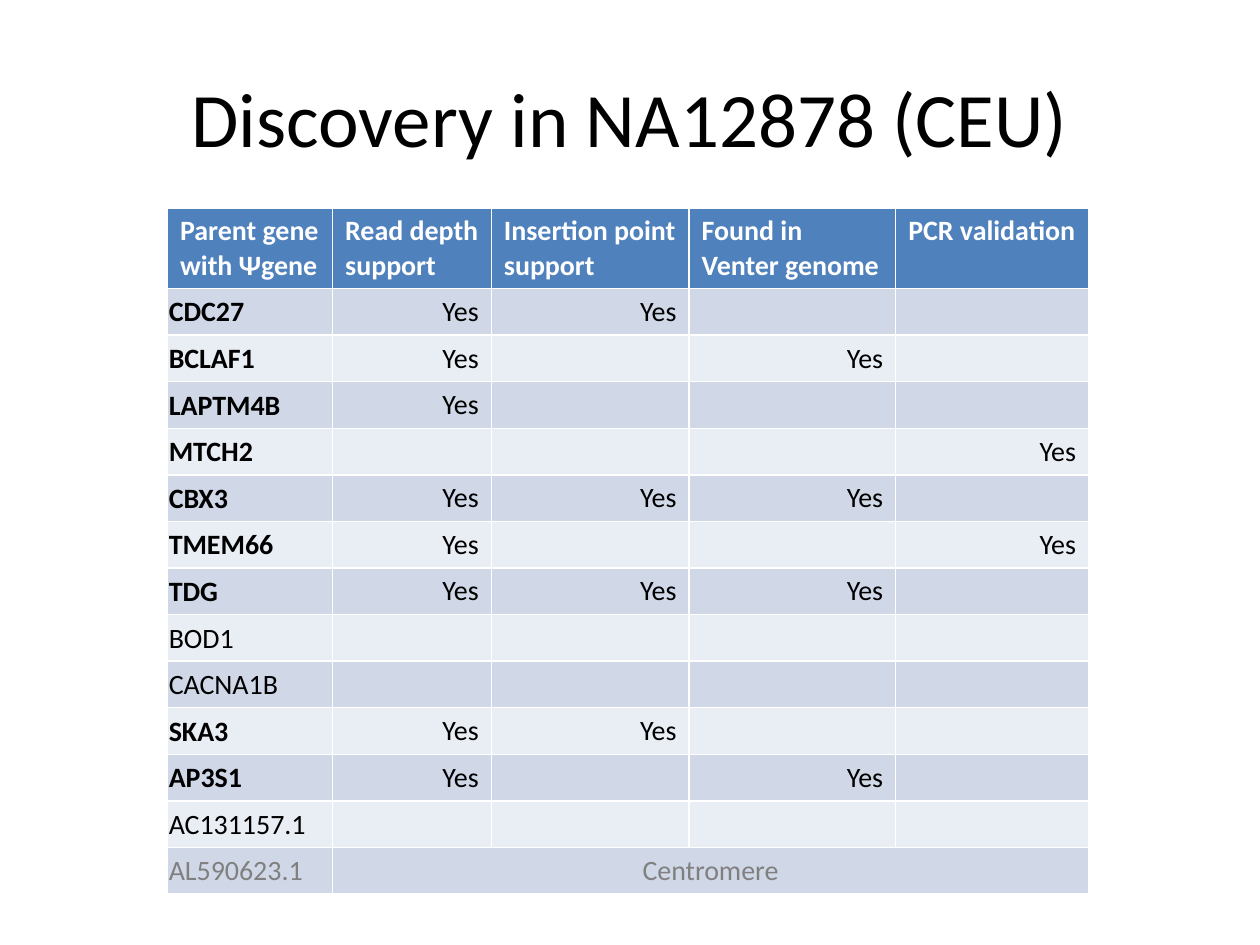
from pptx import Presentation
from pptx.dml.color import RGBColor
from pptx.enum.text import MSO_ANCHOR, PP_ALIGN
from pptx.util import Inches, Pt

BLACK = RGBColor(0x00, 0x00, 0x00)
WHITE = RGBColor(0xFF, 0xFF, 0xFF)
GREY = RGBColor(0x80, 0x80, 0x80)
HEADER_BLUE = RGBColor(0x4F, 0x81, 0xBD)
BANDS = [RGBColor(0xD0, 0xD8, 0xE8), RGBColor(0xE9, 0xED, 0xF4)]

HEADERS = ["Parent gene\nwith Ψgene", "Read depth\nsupport",
           "Insertion point\nsupport", "Found in\nVenter genome",
           "PCR validation"]
COL_WIDTHS = [1.31, 1.26, 1.57, 1.64, 1.53]
# Each gene with the columns that say Yes
GENES = [
    ("CDC27", [1, 2]),
    ("BCLAF1", [1, 3]),
    ("LAPTM4B", [1]),
    ("MTCH2", [4]),
    ("CBX3", [1, 2, 3]),
    ("TMEM66", [1, 4]),
    ("TDG", [1, 2, 3]),
    ("BOD1", []),
    ("CACNA1B", []),
    ("SKA3", [1, 2]),
    ("AP3S1", [1, 3]),
    ("AC131157.1", []),
    ("AL590623.1", []),
]


def style_text(tf, size, color, bold=False, align=PP_ALIGN.LEFT):
    for p in tf.paragraphs:
        p.alignment = align
        p.font.name = "Calibri"
        p.font.size = Pt(size)
        p.font.bold = bold
        p.font.color.rgb = color


def fill_cell(cell, text, fill, color, bold=False, align=PP_ALIGN.LEFT):
    cell.fill.solid()
    cell.fill.fore_color.rgb = fill
    if text:
        cell.text = text
        style_text(cell.text_frame, 16, color, bold, align)
    else:
        # Keep empty cells from stretching the row
        cell.margin_top = cell.margin_bottom = 0


prs = Presentation()
prs.slide_width, prs.slide_height = Inches(10), Inches(7.5)
s = prs.slides.add_slide(prs.slide_layouts[6])

# Title
tf = s.shapes.add_textbox(Inches(0.5), Inches(0.3), Inches(9), Inches(1.25)).text_frame
tf.word_wrap = True
tf.vertical_anchor = MSO_ANCHOR.MIDDLE
tf.text = "Discovery in NA12878 (CEU)"
style_text(tf, 44, BLACK, align=PP_ALIGN.CENTER)

# Table grid; the default style draws the white borders
table = s.shapes.add_table(len(GENES) + 1, len(HEADERS), Inches(1.33), Inches(1.65),
                           Inches(7.31), Inches(5.45)).table
for col, width in zip(table.columns, COL_WIDTHS):
    col.width = Inches(width)
for i, row in enumerate(table.rows):
    row.height = Inches(0.37 if i else 0.64)

# Header row
for c, header in enumerate(HEADERS):
    fill_cell(table.cell(0, c), header, HEADER_BLUE, WHITE, bold=True)

# Gene rows: bold names have some support, the last gene is greyed out
last = len(GENES)
for r, (gene, support) in enumerate(GENES, start=1):
    band = BANDS[(r - 1) % 2]
    name = table.cell(r, 0)
    fill_cell(name, gene, band, GREY if r == last else BLACK, bold=bool(support))
    name.vertical_anchor = MSO_ANCHOR.MIDDLE
    name.margin_left = name.margin_right = name.margin_top = Inches(0.01)
    name.margin_bottom = 0
    for c in range(1, len(HEADERS)):
        fill_cell(table.cell(r, c), "Yes" if c in support else "", band, BLACK,
                  align=PP_ALIGN.RIGHT)

# Merged note in the last row
note = table.cell(last, 1)
note.merge(table.cell(last, len(HEADERS) - 1))
note.margin_top = note.margin_bottom = Inches(0.05)
fill_cell(note, "Centromere", BANDS[0], GREY, align=PP_ALIGN.CENTER)

prs.save("out.pptx")
